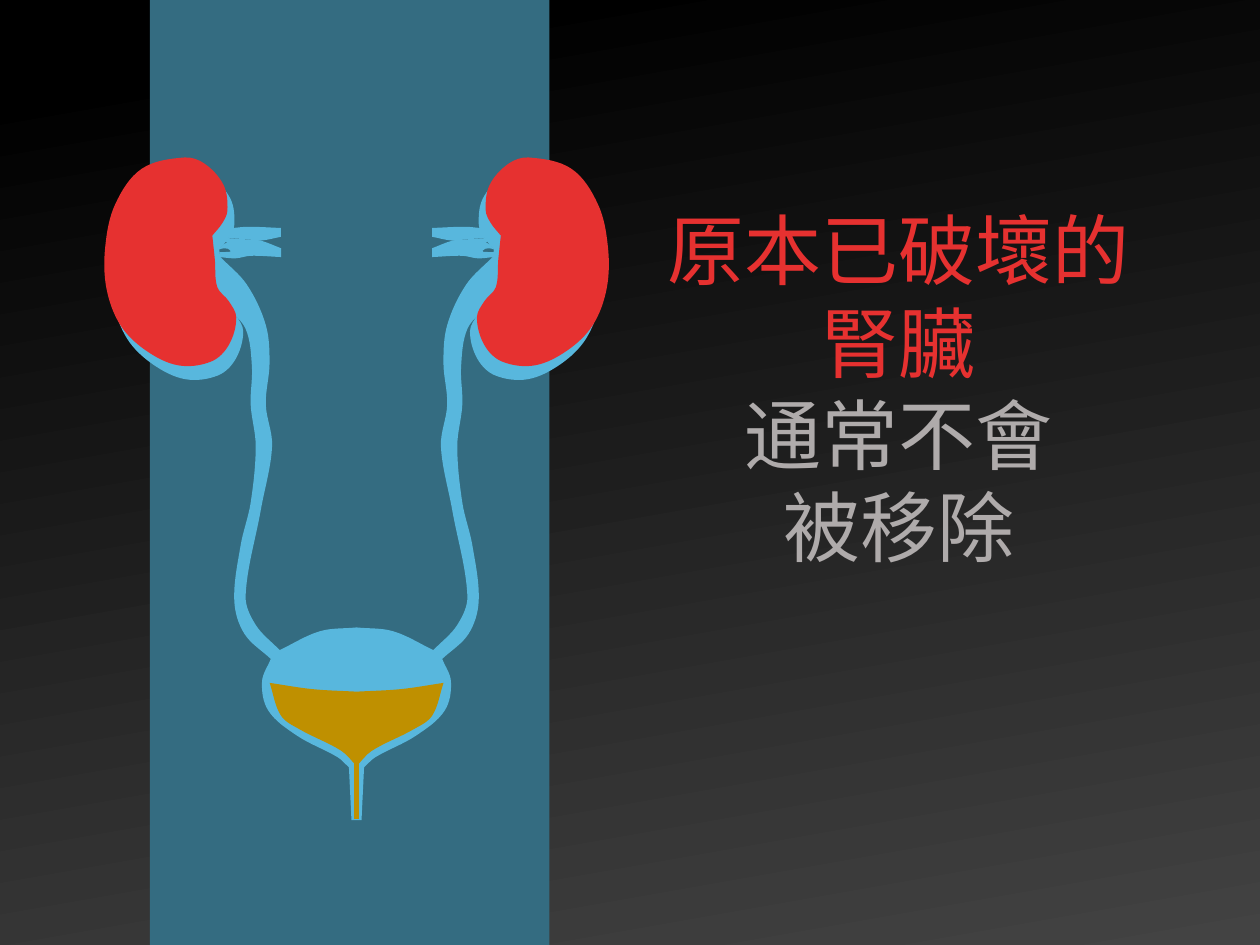
from math import dist

from lxml import etree
from pptx import Presentation
from pptx import util as u
from pptx.dml.color import RGBColor
from pptx.enum import shapes as kinds, text as txt
from pptx.oxml.ns import qn

COLORS = {
    "night": "000000", "dusk": "434343", "torso": "346C81", "tract": "58B7DD",
    "urine": "BF9000", "kidney": "E63130", "plain": "AFABAB",
}
MESSAGE = [
    [("原本已破壞的腎臟", "kidney"), ("通常不會", "plain")],
    [("被移除", "plain")],
]

# An outline is a list of smooth runs; where one run ends there is a corner.
UNIT = 0.72       # points per outline unit
MIRROR = 566      # x of a left point plus x of its right twin
KIDNEY_SHIFT = (-5.5, -11)

LEFT_TRACT = [
    [(283, 498), (254, 501), (222, 516)],
    [(222, 516), (203, 496), (195, 473), (207, 405), (216, 354), (211, 321),
     (214, 288), (211, 258), (196, 226), (175, 204)],
    [(174, 204), (178, 239), (195, 261), (200, 291), (199, 321), (203, 354),
     (199, 399), (191, 433), (186, 477), (194, 503), (215, 523)],
    [(215, 523), (208, 541), (213, 564), (236, 584), (268, 601), (277, 609)],
    [(277, 609), (279, 651)],
]
LEFT_URINE = [
    [(283, 549), (248, 547), (214, 542)],
    [(214, 542), (223, 568), (238, 579), (271, 596), (283, 608)],
]
UPPER_VESSEL = [
    [(181, 189), (185, 181)],
    [(185, 181), (197, 180), (223, 181)],
    [(223, 188), (207, 191), (196, 190), (181, 189)],
]
LOWER_VESSEL = [
    [(174, 200), (179, 200), (183, 199), (178, 197), (174, 198)],
    [(174, 198), (177, 194), (181, 192), (179, 192), (181, 189)],
    [(181, 189), (196, 190), (207, 191), (223, 197)],
    [(223, 204), (199, 203), (187, 205), (174, 204)],
]
KIDNEY = [[
    (174, 198), (182, 188), (186, 178), (183, 158), (168, 141), (152, 136),
    (118, 145), (97, 173), (89, 207), (90, 240), (101, 269), (121, 289),
    (147, 301), (173, 298), (187, 285), (193, 263), (187, 250), (178, 239),
    (176, 217), (174, 198),
]]


def rgb(name):
    return RGBColor.from_string(COLORS[name])


def paint(shape, color):
    shape.fill.solid()
    shape.fill.fore_color.rgb = rgb(color)
    shape.line.fill.background()
    shape.shadow.inherit = False


def flip(outline):
    return [[(MIRROR - x, y) for x, y in run] for run in outline]


def whole(left_half):
    """Complete a left half, drawn from the axis to the axis, with its twin."""
    return left_half + [run[::-1] for run in flip(left_half)[::-1]]


def handle(point, before, after, reach):
    """Control point a third of the reach along the tangent at a point."""
    ratio = reach / 3 / dist(before, after)
    return tuple(p + (b - a) * ratio for p, a, b in zip(point, before, after))


def cubics(run):
    """Yield two controls and an end for each piece of a smooth run."""
    padded = [run[0], *run, run[-1]]
    for before, start, end, after in zip(padded, padded[1:], padded[2:], padded[3:]):
        reach = dist(start, end)
        yield (handle(start, before, end, reach),
               handle(end, after, start, reach), end)


def add_outline(parent, outline, color, shift=(0, 0)):
    def place(point):
        return [u.Pt((p + s) * UNIT) for p, s in zip(point, shift)]

    pieces = []
    position = outline[0][0]
    for run in outline:
        if run[0] != position:
            pieces += cubics([position, run[0]])
        pieces += cubics(run)
        position = run[-1]

    builder = parent.build_freeform(*place(outline[0][0]))
    builder.add_line_segments([place(p) for piece in pieces for p in piece], close=False)
    shape = builder.convert_to_shape()
    drawing = next(shape._element.iter(qn("a:path")))
    steps = drawing.findall(qn("a:lnTo"))
    for i in range(0, len(steps), 3):
        cubic = etree.SubElement(drawing, qn("a:cubicBezTo"))
        for step in steps[i:i + 3]:
            cubic.append(step[0])
            drawing.remove(step)
    etree.SubElement(drawing, qn("a:close"))
    paint(shape, color)


def add_run(paragraph, words, *, color, size=44, font="Arial"):
    run = paragraph.add_run()
    run.text = words
    run.font.name = font
    run.font.size = u.Pt(size)
    run.font.color.rgb = rgb(color)


def add_message(slide):
    title = slide.shapes.title
    title.left, title.top = u.Pt(360.72), u.Pt(112.32)
    title.width, title.height = u.Pt(306), u.Pt(220.32)
    frame = title.text_frame
    frame.word_wrap = True
    frame.auto_size = txt.MSO_AUTO_SIZE.SHAPE_TO_FIT_TEXT
    frame.vertical_anchor = txt.MSO_ANCHOR.TOP
    for i, lines in enumerate(MESSAGE):
        paragraph = frame.add_paragraph() if i else frame.paragraphs[0]
        paragraph.alignment = txt.PP_ALIGN.CENTER
        for j, (words, color) in enumerate(lines):
            if j:
                paragraph.add_line_break()
            add_run(paragraph, words, color=color)


def add_urethra(slide):
    urethra = slide.shapes.add_connector(
        kinds.MSO_CONNECTOR.STRAIGHT,
        u.Pt(203.76), u.Pt(468), u.Pt(203.76), u.Pt(422.64))
    urethra.line.color.rgb = rgb("urine")
    urethra.line.width = u.Pt(3)
    etree.SubElement(urethra._element.spPr, qn("a:effectLst"))


def main():
    deck = Presentation()
    deck.slide_width, deck.slide_height = u.Pt(720), u.Pt(540)
    slide = deck.slides.add_slide(deck.slide_layouts[5])

    backdrop = slide.background.fill
    backdrop.gradient()
    backdrop.gradient_angle = 280
    for stop, place, color in zip(backdrop.gradient_stops, (0.08, 1), ("night", "dusk")):
        stop.position = place
        stop.color.rgb = rgb(color)

    torso = slide.shapes.add_shape(
        kinds.MSO_SHAPE.RECTANGLE, u.Pt(85.68), 0, u.Pt(228.24), deck.slide_height)
    paint(torso, "torso")
    add_message(slide)

    add_outline(slide.shapes, whole(LEFT_TRACT), "tract")
    add_outline(slide.shapes, whole(LEFT_URINE), "urine")
    kidney_backs = slide.shapes.add_group_shape().shapes
    for outline in (UPPER_VESSEL, LOWER_VESSEL, KIDNEY):
        for side in (flip(outline), outline):
            add_outline(kidney_backs, side, "tract")
    add_urethra(slide)
    kidneys = slide.shapes.add_group_shape().shapes
    dx, dy = KIDNEY_SHIFT
    add_outline(kidneys, KIDNEY, "kidney", (dx, dy))
    add_outline(kidneys, flip(KIDNEY), "kidney", (-dx, dy))

    deck.save("out.pptx")


if __name__ == "__main__":
    main()
